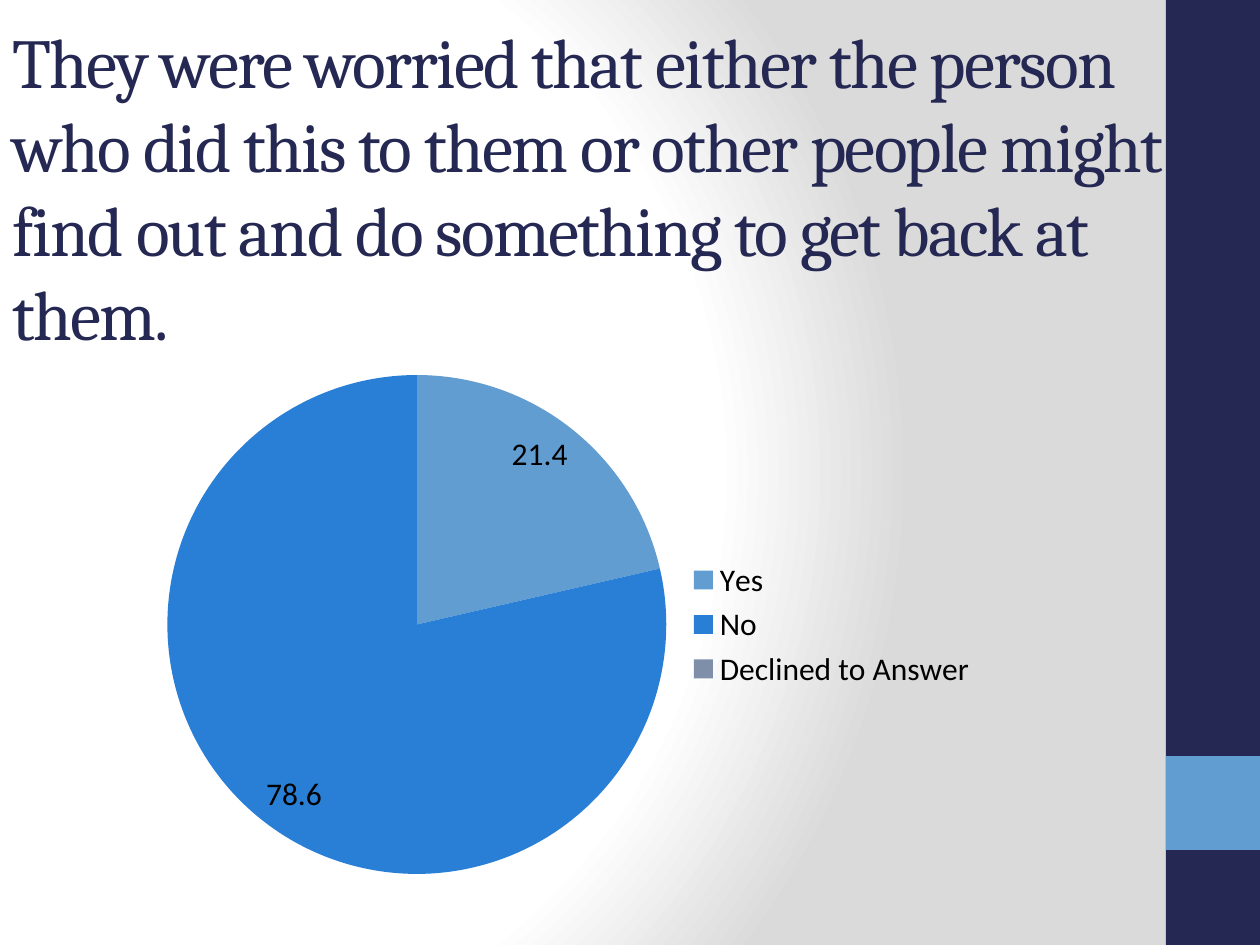
from typing import NamedTuple

from pptx import Presentation
from pptx.chart.data import CategoryChartData
from pptx.dml.color import RGBColor
from pptx.enum.chart import XL_CHART_TYPE, XL_LABEL_POSITION, XL_LEGEND_POSITION
from pptx.enum.shapes import MSO_SHAPE
from pptx.enum.text import MSO_ANCHOR, MSO_AUTO_SIZE, PP_ALIGN
from pptx.oxml import parse_xml
from pptx.oxml.ns import nsdecls, qn
from pptx.util import Emu, Pt

PX_PER_INCH = 126
SLIDE_WIDTH, SLIDE_HEIGHT = 1260, 945

NAVY = RGBColor(0x24, 0x28, 0x52)
SKY = RGBColor(0x62, 0x9D, 0xD1)
BLUE = RGBColor(0x29, 0x7F, 0xD5)
SLATE = RGBColor(0x7F, 0x8F, 0xA9)
BLACK = RGBColor(0x00, 0x00, 0x00)
WHITE = RGBColor(0xFF, 0xFF, 0xFF)
GREY = RGBColor(0xDA, 0xDA, 0xDA)

TITLE = (
    "They were worried that either the person who did this to them or other "
    "people might find out and do something to get back at them."
)


class Box(NamedTuple):
    left: int
    top: int
    width: int
    height: int


class Band(NamedTuple):
    box: Box
    color: RGBColor


class Answer(NamedTuple):
    label: str
    percent: float
    color: RGBColor


BANDS = [
    Band(Box(1166, 0, 94, SLIDE_HEIGHT), NAVY),
    Band(Box(1166, 756, 94, 94), SKY),
]
TITLE_BOX = Box(0, 108, 1174, 158)
CHART_BOX = Box(150, 345, 840, 559)
ANSWERS = [
    Answer("Yes", 21.4, SKY),
    Answer("No", 78.6, BLUE),
    Answer("Declined to Answer", 0, SLATE),
]


def px(length: int) -> Emu:
    return Emu(round(length * 914400 / PX_PER_INCH))


def place(box: Box) -> list[Emu]:
    return [px(length) for length in box]


def paint_background(slide) -> None:
    slide.background.fill.solid()
    properties = slide.element.find(".//" + qn("p:bgPr"))
    stops = "".join(
        f'<a:gs pos="{percent * 1000}"><a:srgbClr val="{color}"/></a:gs>'
        for percent, color in [(0, WHITE), (75, WHITE), (100, GREY)]
    )
    properties[0] = parse_xml(
        f'<a:gradFill {nsdecls("a")} rotWithShape="1"><a:gsLst>{stops}</a:gsLst>'
        '<a:path path="circle"><a:fillToRect l="20000" t="50000" r="100000" b="50000"/>'
        "</a:path></a:gradFill>"
    )


def add_band(slide, band: Band) -> None:
    shape = slide.shapes.add_shape(MSO_SHAPE.RECTANGLE, *place(band.box))
    shape.shadow.inherit = False
    shape.fill.solid()
    shape.fill.fore_color.rgb = band.color
    shape.line.fill.background()


def set_title(slide, text: str, box: Box) -> None:
    title = slide.shapes.title
    title.left, title.top, title.width, title.height = place(box)
    text_frame = title.text_frame
    text_frame.text = text
    text_frame.word_wrap = True
    text_frame.auto_size = MSO_AUTO_SIZE.NONE
    text_frame.vertical_anchor = MSO_ANCHOR.MIDDLE
    paragraph = text_frame.paragraphs[0]
    paragraph.alignment = PP_ALIGN.LEFT
    font = paragraph.runs[0].font
    font.name = "Cambria"
    font.size = Pt(40)
    font.color.rgb = NAVY
    # Letter spacing of -1 pt
    paragraph.runs[0].font._element.set("spc", "-100")
    # Bring the title in front of the side bands
    title.element.getparent().append(title.element)


def add_pie(slide, answers: list[Answer], box: Box) -> None:
    chart_data = CategoryChartData()
    chart_data.categories = [answer.label for answer in answers]
    chart_data.add_series("Series 1", [answer.percent for answer in answers])
    chart = slide.shapes.add_chart(XL_CHART_TYPE.PIE, *place(box), chart_data).chart
    chart.has_title = False
    chart.font.name = "Calibri"
    chart.font.size = Pt(18)
    chart.font.color.rgb = BLACK
    chart.has_legend = True
    chart.legend.position = XL_LEGEND_POSITION.RIGHT
    chart.legend.include_in_layout = False

    series = chart.plots[0].series[0]
    labels = series.data_labels
    labels.show_value = True
    labels.position = XL_LABEL_POSITION.INSIDE_END
    for index, answer in enumerate(answers):
        fill = series.points[index].format.fill
        fill.solid()
        fill.fore_color.rgb = answer.color
        # An empty slice carries no label
        if not answer.percent:
            labels._element.insert(0, parse_xml(
                f'<c:dLbl {nsdecls("c")}><c:idx val="{index}"/>'
                '<c:delete val="1"/></c:dLbl>'
            ))


def main() -> None:
    presentation = Presentation()
    presentation.slide_width = px(SLIDE_WIDTH)
    presentation.slide_height = px(SLIDE_HEIGHT)
    slide = presentation.slides.add_slide(presentation.slide_layouts[5])

    # Backdrop
    paint_background(slide)
    for band in BANDS:
        add_band(slide, band)

    # Content
    set_title(slide, TITLE, TITLE_BOX)
    add_pie(slide, ANSWERS, CHART_BOX)

    presentation.save("out.pptx")


if __name__ == "__main__":
    main()
